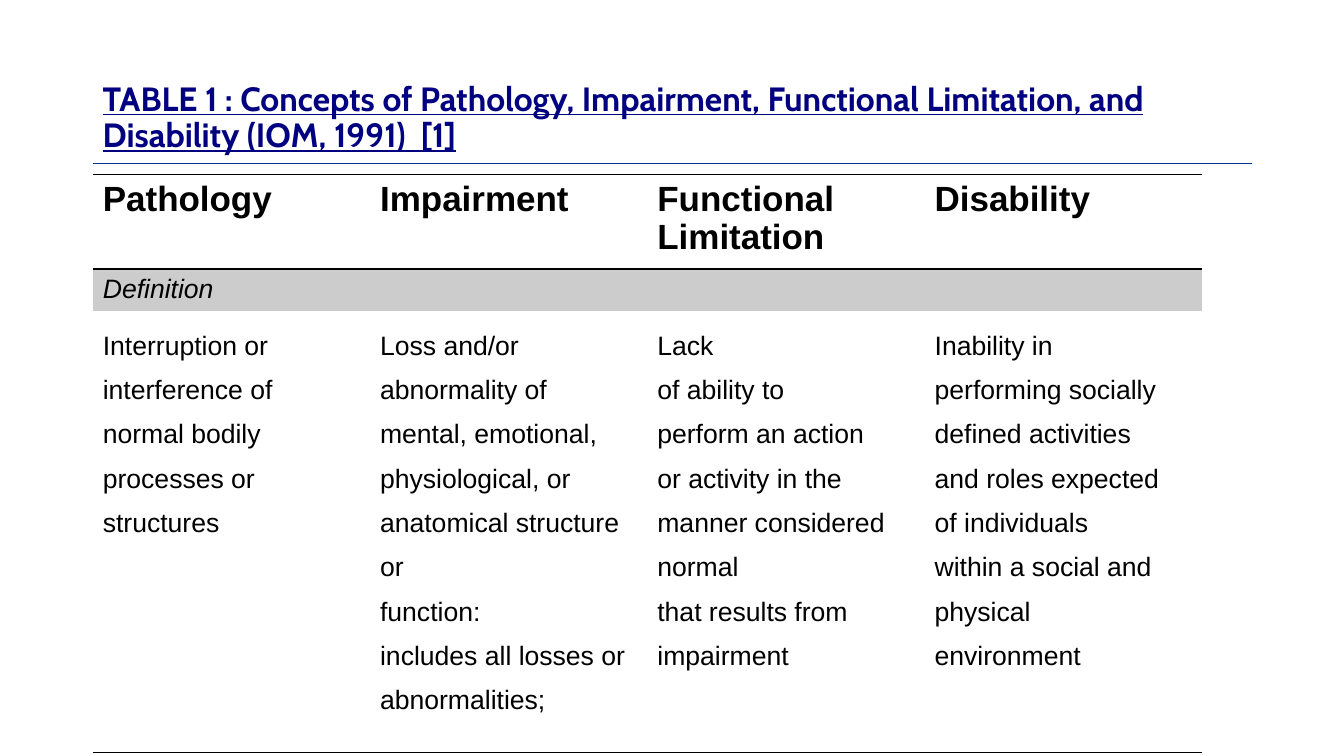
"""Build a slide with a table of four disability concepts and their definitions."""
from dataclasses import dataclass

from lxml import etree
from pptx import Presentation
from pptx import util as u
from pptx.dml.color import RGBColor
from pptx.enum import shapes, text
from pptx.oxml import ns

BLACK = RGBColor(0x00, 0x00, 0x00)
NAVY = RGBColor(0x00, 0x00, 0x80)
RULE_BLUE = RGBColor(0x01, 0x35, 0x91)
BAND_GRAY = RGBColor(0xCC, 0xCC, 0xCC)
PLAIN_TABLE_STYLE = "{2D5ABB26-0587-4C30-8999-92F81FD0307C}"
LEFT = u.Inches(0.92)
CONTENT_WIDTH = u.Inches(11.5)
COLUMN_WIDTH = u.Inches(2.75)
TITLE = ("TABLE 1 : Concepts of Pathology, Impairment, Functional Limitation, "
         "and Disability (IOM, 1991)  [1]")


@dataclass(frozen=True)
class Concept:
    name: str
    definition: str
    band: str = ""


@dataclass(frozen=True)
class RowStyle:
    height: float
    size: float
    bold: bool = False
    italic: bool = False
    spacing: float = 1.0
    fill: RGBColor | None = None
    borders: tuple[tuple[str, float], ...] = ()


CONCEPTS = (
    Concept("Pathology",
            "Interruption or interference of normal bodily processes or structures",
            "Definition"),
    Concept("Impairment",
            "Loss and/or abnormality of\n"
            "mental, emotional, physiological, or anatomical structure or\n"
            "function:\nincludes all losses or abnormalities;"),
    Concept("Functional Limitation",
            "Lack\nof ability to\nperform an action\nor activity in the\n"
            "manner considered normal\nthat results from\nimpairment"),
    Concept("Disability",
            "Inability in\nperforming socially\ndefined activities\n"
            "and roles expected\nof individuals\nwithin a social and\n"
            "physical\nenvironment"),
)
ROW_STYLES = (
    RowStyle(0.94, 25, bold=True, borders=(("lnT", 1), ("lnB", 2))),
    RowStyle(0.42, 19, italic=True, fill=BAND_GRAY),
    RowStyle(4.32, 19, spacing=1.5, borders=(("lnB", 1),)),
)


def add_border(cell, side: str, points: float) -> None:
    properties = cell._tc.get_or_add_tcPr()
    border = etree.SubElement(properties, ns.qn(f"a:{side}"), w=str(u.Pt(points)))
    fill = etree.SubElement(border, ns.qn("a:solidFill"))
    etree.SubElement(fill, ns.qn("a:srgbClr"), val=str(BLACK))


def fill_cell(cell, content: str, style: RowStyle) -> None:
    for side, points in style.borders:
        add_border(cell, side, points)
    if style.fill is None:
        cell.fill.background()
    else:
        cell.fill.solid()
        cell.fill.fore_color.rgb = style.fill
    cell.text = content
    for paragraph in cell.text_frame.paragraphs:
        paragraph.line_spacing = style.spacing
        font = paragraph.font
        font.name, font.size = "Arial", u.Pt(style.size)
        font.bold, font.italic = style.bold, style.italic
        font.color.rgb = BLACK


def add_rule(slide) -> None:
    y = u.Inches(1.62)
    rule = slide.shapes.add_connector(
        shapes.MSO_CONNECTOR.STRAIGHT, LEFT, y, LEFT + CONTENT_WIDTH, y)
    rule.line.color.rgb = RULE_BLUE
    rule.line.width = u.Pt(1)
    etree.SubElement(rule._element.spPr, ns.qn("a:effectLst"))


def add_title(slide) -> None:
    box = slide.shapes.add_textbox(LEFT, u.Inches(0.75), CONTENT_WIDTH, u.Inches(0.85))
    frame = box.text_frame
    frame.word_wrap = True
    frame.vertical_anchor = text.MSO_ANCHOR.MIDDLE
    frame.text = TITLE
    paragraph = frame.paragraphs[0]
    paragraph.line_spacing = 0.9
    font = paragraph.font
    font.name, font.size = "Cabin", u.Pt(24)
    font.bold = font.underline = True
    font.color.rgb = NAVY


def add_concept_table(slide) -> None:
    height = u.Inches(sum(style.height for style in ROW_STYLES))
    table = slide.shapes.add_table(
        len(ROW_STYLES), len(CONCEPTS), LEFT, u.Inches(1.73),
        COLUMN_WIDTH * len(CONCEPTS), height).table
    table.first_row = table.horz_banding = False
    table._tbl.tblPr.find(ns.qn("a:tableStyleId")).text = PLAIN_TABLE_STYLE
    for row, style in zip(table.rows, ROW_STYLES):
        row.height = u.Inches(style.height)
    for column, concept in enumerate(CONCEPTS):
        contents = (concept.name, concept.band, concept.definition)
        for row, (content, style) in enumerate(zip(contents, ROW_STYLES)):
            fill_cell(table.cell(row, column), content, style)


def main() -> None:
    presentation = Presentation()
    presentation.slide_width = u.Inches(13.33)
    presentation.slide_height = u.Inches(7.5)
    slide = presentation.slides.add_slide(presentation.slide_layouts[6])
    add_rule(slide)
    add_title(slide)
    add_concept_table(slide)
    presentation.save("out.pptx")


if __name__ == "__main__":
    main()
